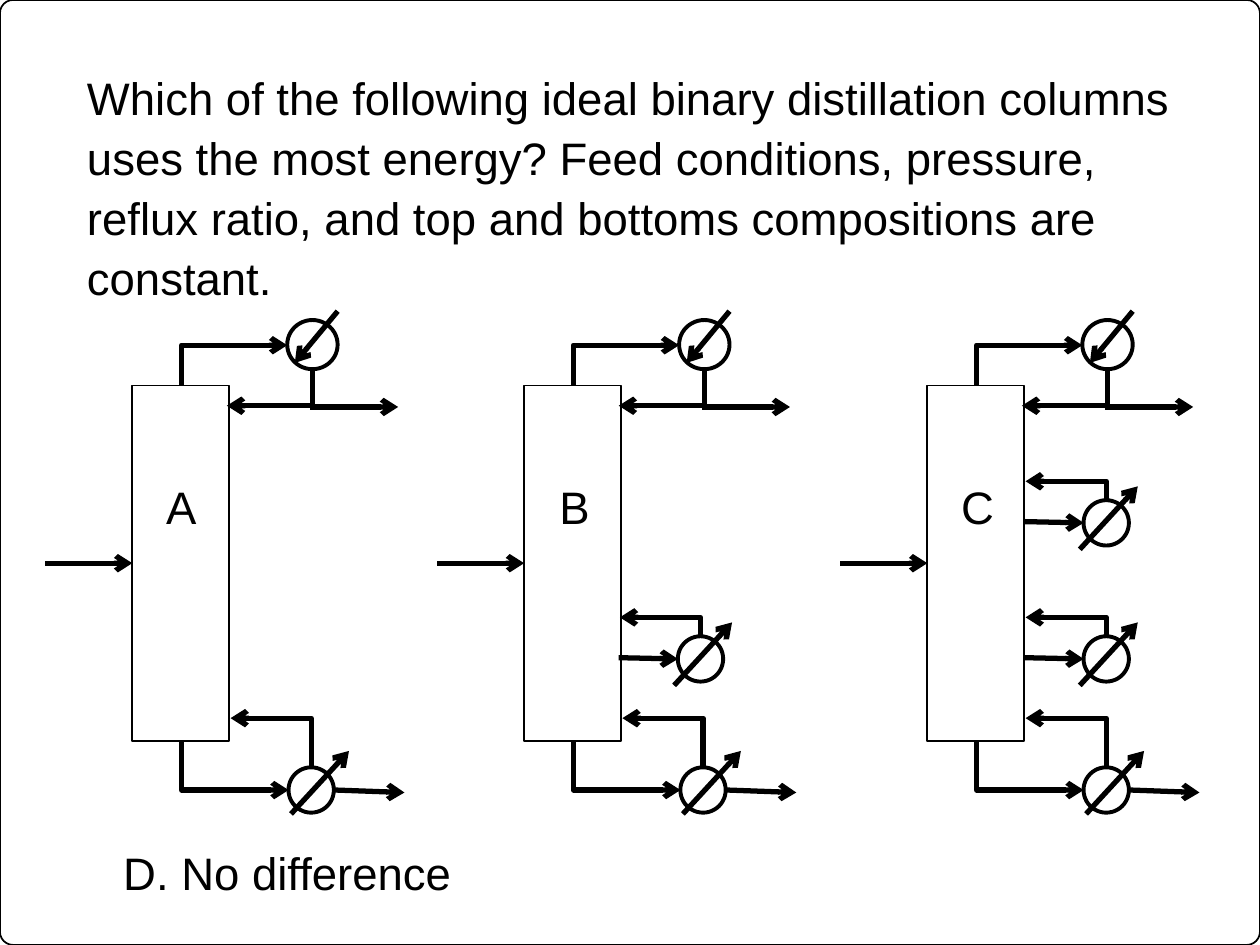
from lxml.etree import SubElement
from pptx import Presentation
from pptx.dml.color import RGBColor
from pptx.enum.shapes import MSO_CONNECTOR, MSO_SHAPE
from pptx.enum.text import MSO_ANCHOR, MSO_AUTO_SIZE
from pptx.oxml.ns import qn
from pptx.util import Inches, Pt

COLORS = {"ink": "000000", "paper": "FFFFFF"}
INK = RGBColor.from_string(COLORS["ink"])
PAPER = RGBColor.from_string(COLORS["paper"])

presentation = Presentation()
presentation.slide_width = Inches(10)
presentation.slide_height = Inches(7.5)
slide = presentation.slides.add_slide(presentation.slide_layouts[6])
slide.background.fill.solid()
slide.background.fill.fore_color.rgb = PAPER


def add_outline(kind, left, top, width, height, line_width):
    shape = slide.shapes.add_shape(
        kind, Inches(left), Inches(top), Inches(width), Inches(height))
    shape.shadow.inherit = False
    shape.fill.solid()
    shape.fill.fore_color.rgb = PAPER
    shape.line.color.rgb = INK
    shape.line.width = Pt(line_width)
    return shape


def add_arrow(x1, y1, x2, y2, bent=False):
    """Draw a straight arrow, or one that runs vertically and then turns."""
    kind = MSO_CONNECTOR.STRAIGHT
    rotation = 0
    if bent:
        # The elbow preset runs sideways first, so it is turned a quarter
        kind = MSO_CONNECTOR.ELBOW
        rotation = 90 if (x2 > x1) == (y2 < y1) else 270
        turn = 1 if rotation == 90 else -1
        middle_x, middle_y = (x1 + x2) / 2, (y1 + y2) / 2
        half_width, half_height = turn * (y2 - y1) / 2, turn * (x1 - x2) / 2
        x1, x2 = middle_x - half_width, middle_x + half_width
        y1, y2 = middle_y - half_height, middle_y + half_height
    connector = slide.shapes.add_connector(
        kind, Inches(x1), Inches(y1), Inches(x2), Inches(y2))
    connector.line.color.rgb = INK
    connector.line.width = Pt(3)
    properties = connector._element.spPr
    if bent:
        properties.find(qn("a:xfrm")).set("rot", str(rotation * 60000))
        properties.find(qn("a:prstGeom")).set("prst", "bentConnector2")
    SubElement(properties.find(qn("a:ln")), qn("a:tailEnd"), type="arrow")
    SubElement(properties, qn("a:effectLst"))


# Slide frame
frame = add_outline(MSO_SHAPE.ROUNDED_RECTANGLE, 0, 0, 10, 7.5, 1)
frame.adjustments[0] = 0.014

# Question
question = slide.shapes.add_textbox(
    Inches(0.69), Inches(0.51), Inches(8.79), Inches(2.5))
text_frame = question.text_frame
text_frame.word_wrap = True
text_frame.vertical_anchor = MSO_ANCHOR.TOP
text_frame.margin_left = text_frame.margin_right = 0
text_frame.margin_top = text_frame.margin_bottom = 0
paragraph = text_frame.paragraphs[0]
paragraph.text = (
    "Which of the following ideal binary distillation columns uses the most "
    "energy? Feed conditions, pressure, reflux ratio, and top and bottoms "
    "compositions are constant.")
paragraph.line_spacing = 1.1
paragraph.font.size = Pt(26)
paragraph.font.name = "Arial"
paragraph.font.color.rgb = INK

# Three columns, each with feed, condenser and reboiler
for x in (1.05, 4.16, 7.36):
    add_outline(MSO_SHAPE.RECTANGLE, x, 3.06, 0.77, 2.82, 1)
    add_arrow(x - 0.69, 4.47, x, 4.47)

    # Condenser with reflux and distillate
    add_arrow(x + 0.39, 3.06, x + 1.23, 2.74, bent=True)
    add_outline(MSO_SHAPE.OVAL, x + 1.23, 2.54, 0.4, 0.39, 2.25)
    add_arrow(x + 1.43, 2.93, x + 0.75, 3.22, bent=True)
    add_arrow(x + 1.41, 3.23, x + 2.11, 3.23)
    add_arrow(x + 1.63, 2.47, x + 1.29, 2.88)

    # Reboiler with vapor return and bottoms
    add_arrow(x + 0.39, 5.88, x + 1.24, 6.27, bent=True)
    add_outline(MSO_SHAPE.OVAL, x + 1.24, 6.09, 0.36, 0.36, 2.25)
    add_arrow(x + 1.42, 6.09, x + 0.78, 5.7, bent=True)
    add_arrow(x + 1.6, 6.27, x + 2.16, 6.29)
    add_arrow(x + 1.26, 6.46, x + 1.72, 5.96)

# Side reboilers: one on column B, two on column C
for x, y in ((5.38, 5.05), (8.6, 5.05), (8.6, 3.97)):
    add_outline(MSO_SHAPE.OVAL, x, y, 0.36, 0.36, 2.25)
    add_arrow(x + 0.18, y, x - 0.46, y - 0.15, bent=True)
    add_arrow(x - 0.03, y + 0.39, x + 0.43, y - 0.11)
    add_arrow(x - 0.47, y + 0.17, x, y + 0.18)

# Answer labels
labels = (
    ("D. No difference", 0.88, 6.66, 2.83),
    ("A", 1.22, 3.75, 0.45),
    ("B", 4.34, 3.75, 0.45),
    ("C", 7.53, 3.75, 0.46),
)
for text, left, top, width in labels:
    label = slide.shapes.add_textbox(
        Inches(left), Inches(top), Inches(width), Inches(0.54))
    label.text_frame.word_wrap = False
    label.text_frame.auto_size = MSO_AUTO_SIZE.SHAPE_TO_FIT_TEXT
    paragraph = label.text_frame.paragraphs[0]
    paragraph.text = text
    paragraph.font.size = Pt(26)
    paragraph.font.name = "Arial"
    paragraph.font.color.rgb = INK

presentation.save("out.pptx")
